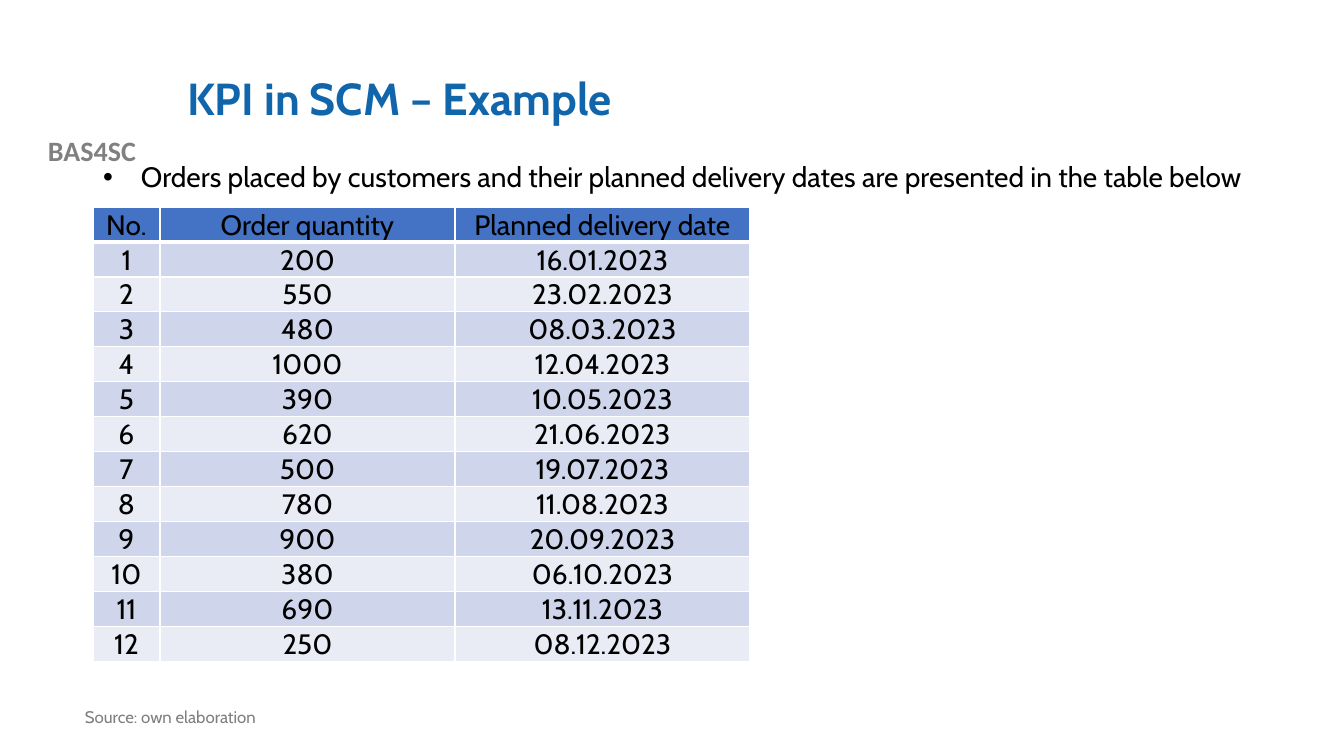
from pptx import Presentation
from pptx.dml.color import RGBColor
from pptx.enum.text import MSO_ANCHOR, MSO_AUTO_SIZE, PP_ALIGN
from pptx.oxml.ns import qn
from pptx.util import Pt
from lxml.etree import SubElement

EMU_PER_PX = 914400 / 100.8
BLUE = RGBColor(0x10, 0x65, 0xAB)
BLACK = RGBColor(0x00, 0x00, 0x00)
GREY = RGBColor(0x80, 0x80, 0x80)
SOURCE_GREY = RGBColor(0x7F, 0x7F, 0x7F)
HEADER_FILL = RGBColor(0x44, 0x72, 0xC4)
ODD_FILL = RGBColor(0xCF, 0xD5, 0xEA)
EVEN_FILL = RGBColor(0xE9, 0xEB, 0xF5)
WHITE = RGBColor(0xFF, 0xFF, 0xFF)


def px(*lengths):
    return [round(length * EMU_PER_PX) for length in lengths]


def write(frame, text, size, color, align, font="Cabin", bold=False, spacing=0.9):
    frame.text = text
    para = frame.paragraphs[0]
    para.alignment = align
    para.line_spacing = spacing
    para.space_before = Pt(0)
    span = para.runs[0]
    span.font.name = font
    span.font.size = Pt(size)
    span.font.bold = bold
    span.font.color.rgb = color


deck = Presentation()
deck.slide_width, deck.slide_height = px(1344, 756)
page = deck.slides.add_slide(deck.slide_layouts[1])

project = page.shapes.add_textbox(*px(0, 129, 184, 44))
project.text_frame.word_wrap = True
write(project.text_frame, "BAS4SC", 20, GREY, PP_ALIGN.CENTER, "Calibri", True, 1.0)

title = page.shapes.title
title.left, title.top, title.width, title.height = px(177, 40, 1075, 123)
title.text_frame.vertical_anchor = MSO_ANCHOR.MIDDLE
title.text_frame.auto_size = MSO_AUTO_SIZE.NONE
write(title.text_frame, "KPI in SCM – Example", 32, BLUE, PP_ALIGN.LEFT, bold=True)

body = page.placeholders[1]
body.left, body.top, body.width, body.height = px(93, 158, 1208, 115)
body.text_frame.auto_size = MSO_AUTO_SIZE.NONE
properties = body.text_frame.paragraphs[0]._p.get_or_add_pPr()
properties.set("marL", "0")
properties.set("indent", "0")
SubElement(properties, qn("a:buNone"))
write(
    body.text_frame,
    "Orders placed by customers and their planned delivery dates are presented in the table below",
    20, BLACK, PP_ALIGN.JUSTIFY,
)

source = page.shapes.add_textbox(*px(75, 704, 505, 52))
source.text_frame.word_wrap = True
write(source.text_frame, "Source: own elaboration", 12, SOURCE_GREY, PP_ALIGN.LEFT)

orders = [
    ("200", "16.01.2023"),
    ("550", "23.02.2023"),
    ("480", "08.03.2023"),
    ("1000", "12.04.2023"),
    ("390", "10.05.2023"),
    ("620", "21.06.2023"),
    ("500", "19.07.2023"),
    ("780", "11.08.2023"),
    ("900", "20.09.2023"),
    ("380", "06.10.2023"),
    ("690", "13.11.2023"),
    ("250", "08.12.2023"),
]
rows = [("No.", "Order quantity", "Planned delivery date")]
rows += [(str(number), *order) for number, order in enumerate(orders, 1)]
column_widths = px(67, 295, 295)
row_height = 35

table = page.shapes.add_table(
    len(rows), len(column_widths), *px(93, 207, 657, row_height * len(rows))
).table
for column, width in zip(table.columns, column_widths):
    column.width = width

for row_index, values in enumerate(rows):
    table.rows[row_index].height = px(row_height)[0]
    if row_index == 0:
        fill = HEADER_FILL
    else:
        fill = ODD_FILL if row_index % 2 else EVEN_FILL
    for column_index, value in enumerate(values):
        cell = table.cell(row_index, column_index)
        cell.vertical_anchor = MSO_ANCHOR.MIDDLE
        cell.margin_left, cell.margin_top, cell.margin_right, cell.margin_bottom = px(1, 1, 1, 0)
        write(cell.text_frame, value, 20, BLACK, PP_ALIGN.CENTER, spacing=1.0)
        for side in ("L", "R", "T", "B"):
            under_header = (row_index, side) in ((0, "B"), (1, "T"))
            border = SubElement(cell._tc.get_or_add_tcPr(), qn(f"a:ln{side}"))
            border.set("w", str(Pt(3 if under_header else 1)))
            paint = SubElement(border, qn("a:solidFill"))
            SubElement(paint, qn("a:srgbClr")).set("val", str(WHITE))
        cell.fill.solid()
        cell.fill.fore_color.rgb = fill

deck.save("out.pptx")
